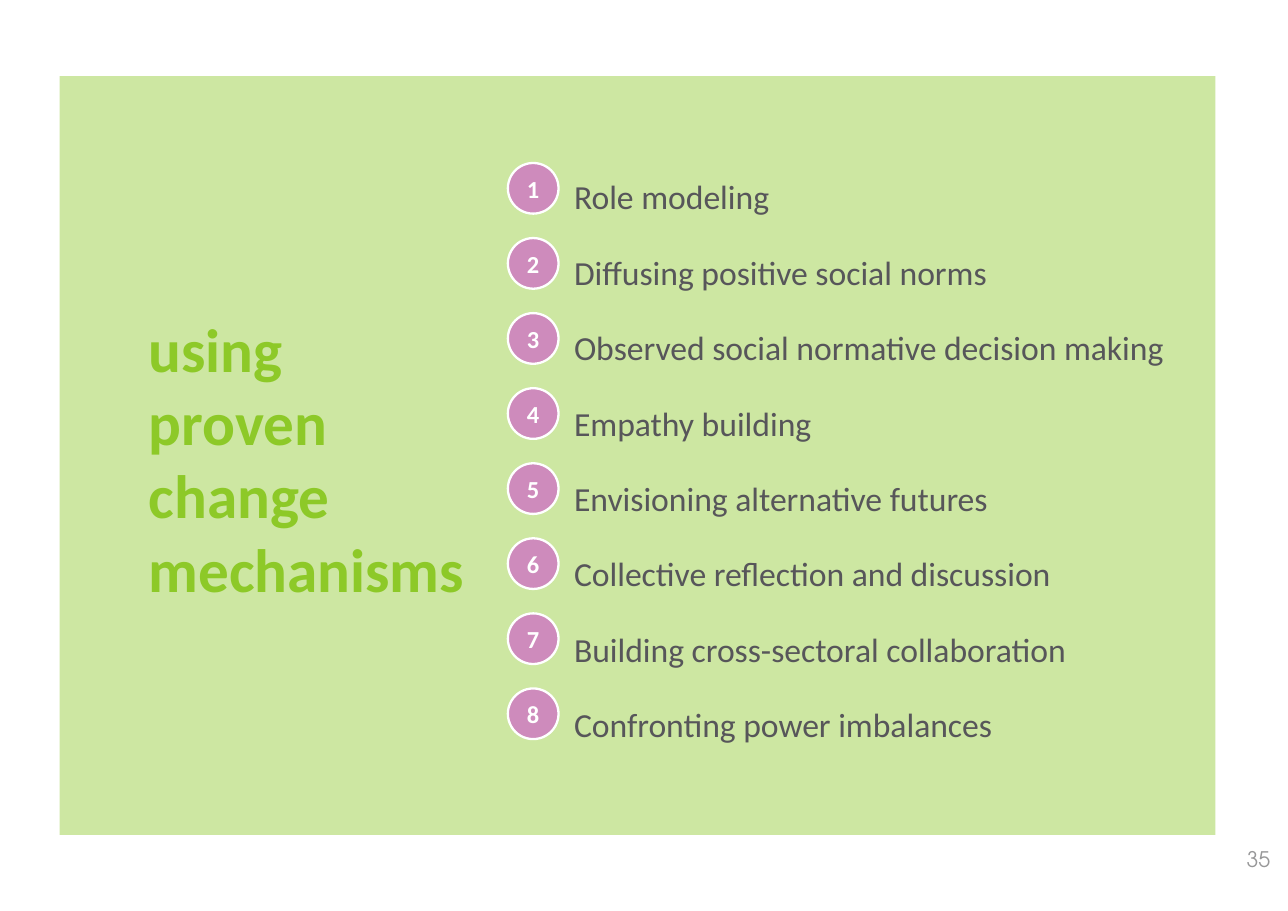
from lxml import etree
from pptx import Presentation
from pptx import util as u
from pptx.dml.color import RGBColor
from pptx.enum import shapes, text
from pptx.oxml.ns import qn

TITLE = ["using", "proven", "change", "mechanisms"]
MECHANISMS = [
    "Role modeling",
    "Diffusing positive social norms",
    "Observed social normative decision making",
    "Empathy building",
    "Envisioning alternative futures",
    "Collective reflection and discussion",
    "Building cross-sectoral collaboration",
    "Confronting power imbalances",
]
PAGE_NUMBER = "35"

COLORS = {"green": "8DC928", "pink": "CE8BBC", "white": "FFFFFF",
          "text": "57565A", "number": "989899"}
PANEL_OPACITY = 43
BADGE_LEFT, BADGE_SIZE = 4.61, 0.46
FIRST_BADGE_TOP, LAST_BADGE_TOP = 1.48, 6.25
LIST_GAP = 15


def color(name):
    return RGBColor.from_string(COLORS[name])


def write(box, paragraphs, size, ink, font="Calibri", bold=False, align="LEFT",
          anchor="TOP", inset=(0.11, 0.11), line_spacing=None, gap=0, last_gap=0):
    """Fill a shape with paragraphs, each given as a list of lines."""
    frame = box.text_frame
    frame.word_wrap = True
    frame.vertical_anchor = getattr(text.MSO_ANCHOR, anchor)
    frame.margin_left = frame.margin_right = u.Inches(inset[0])
    frame.margin_top = frame.margin_bottom = u.Inches(inset[1])
    for index, lines in enumerate(paragraphs):
        para = frame.add_paragraph() if index else frame.paragraphs[0]
        para.alignment = getattr(text.PP_ALIGN, align)
        para.line_spacing = line_spacing
        para.space_before = u.Pt(gap if index else 0)
        para.space_after = u.Pt(0)
        for number, line in enumerate(lines):
            if number:
                para.add_line_break()
            span = para.add_run()
            span.text = line
            span.font.name = font
            span.font.size = u.Pt(size)
            span.font.bold = bold
            span.font.color.rgb = color(ink)
    para.space_after = u.Pt(last_gap)


def add_box(page, *place):
    return page.shapes.add_textbox(*map(u.Inches, place))


def add_filled(parent, kind, place, fill):
    shape = parent.shapes.add_shape(kind, *map(u.Inches, place))
    shape.shadow.inherit = False
    shape.fill.solid()
    shape.fill.fore_color.rgb = color(fill)
    return shape


def add_panel(page):
    panel = add_filled(page, shapes.MSO_SHAPE.RECTANGLE,
                       (0.54, 0.69, 10.49, 6.89), "green")
    panel.line.fill.background()
    fill = panel.fill._xPr.find(qn("a:solidFill"))
    etree.SubElement(fill[0], qn("a:alpha"), val=str(PANEL_OPACITY * 1000))


def add_badges(page):
    group = page.shapes.add_group_shape()
    pitch = (LAST_BADGE_TOP - FIRST_BADGE_TOP) / (len(MECHANISMS) - 1)
    for index in range(len(MECHANISMS)):
        top = FIRST_BADGE_TOP + index * pitch
        badge = add_filled(group, shapes.MSO_SHAPE.OVAL,
                           (BADGE_LEFT, top, BADGE_SIZE, BADGE_SIZE), "pink")
        badge.line.color.rgb = color("white")
        badge.line.width = u.Pt(1.5)
        write(badge, [[str(index + 1)]], 16, "white", bold=True,
              align="CENTER", anchor="MIDDLE", inset=(0, 0))


def main():
    deck = Presentation()
    deck.slide_width, deck.slide_height = u.Inches(11.69), u.Inches(8.27)
    page = deck.slides.add_slide(deck.slide_layouts[6])

    write(add_box(page, 10.94, 7.63, 0.7, 0.63), [[PAGE_NUMBER]], 14, "number",
          font="TeX Gyre Adventor", align="RIGHT", inset=(0.11, 0.05))
    add_panel(page)
    write(add_box(page, 1.24, 1.46, 3.18, 5.39), [TITLE], 40, "green",
          bold=True, anchor="MIDDLE")
    listing = add_box(page, 5.1, 1.38, 6.32, 5.44)
    write(listing, [[name] for name in MECHANISMS], 22, "text",
          line_spacing=1.3, gap=LIST_GAP, last_gap=LIST_GAP)
    listing.text_frame.auto_size = text.MSO_AUTO_SIZE.SHAPE_TO_FIT_TEXT
    add_badges(page)
    deck.save("out.pptx")


if __name__ == "__main__":
    main()
